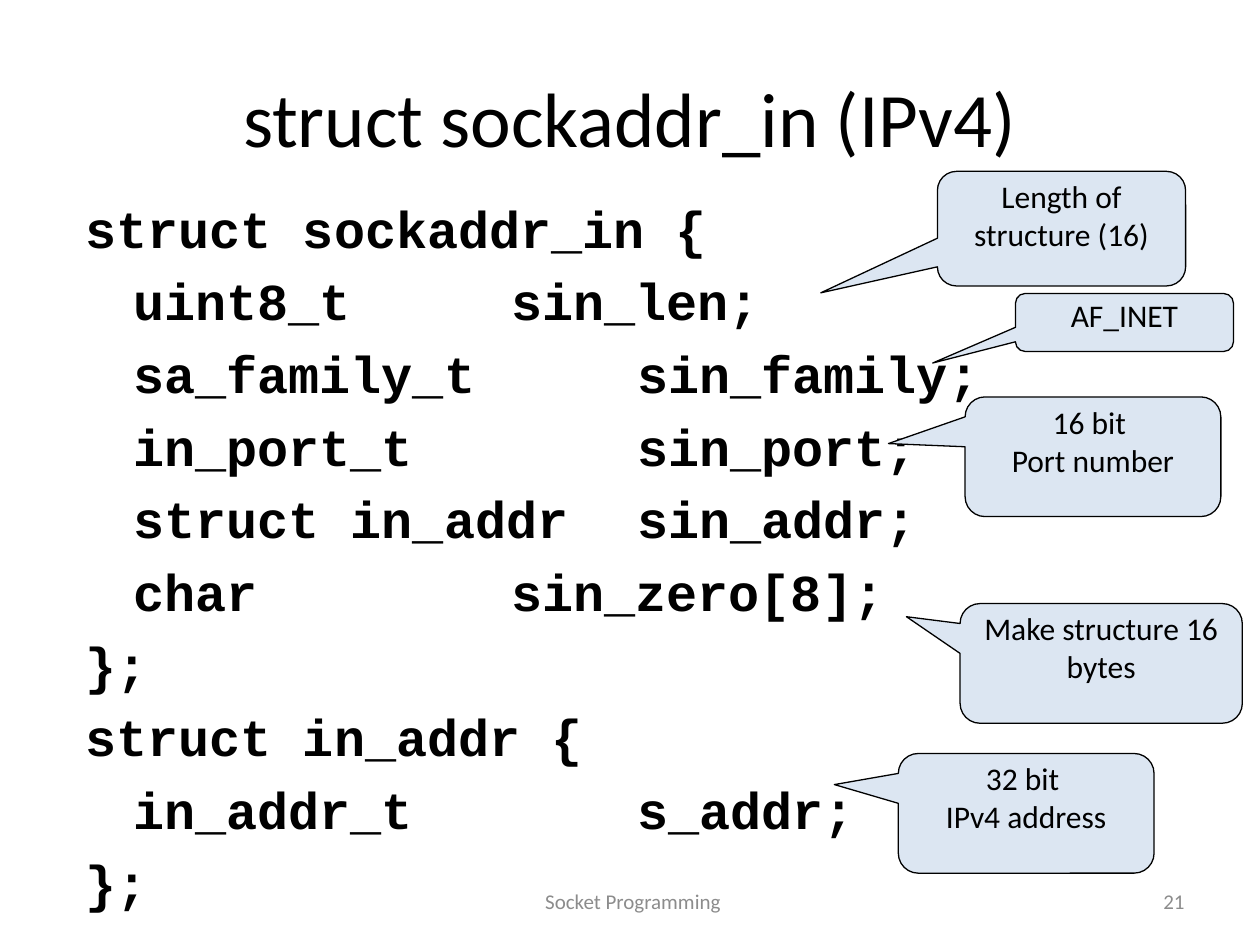
import lxml.etree
import pptx
import pptx.dml.color
import pptx.enum.shapes
import pptx.enum.text
import pptx.oxml.ns
import pptx.util

PX = 9144  # EMU per px, 100 px to the inch
ALIGN = pptx.enum.text.PP_ALIGN
ANCHOR = pptx.enum.text.MSO_ANCHOR

# Tab stops in px from the left edge of the code text
TYPE_STOP, NEAR_STOP, FAR_STOP = 38, 338, 438

# Line of code and the tab stop of its member name
CODE = [
    ("struct sockaddr_in {", None),
    ("\tuint8_t\tsin_len;", NEAR_STOP),
    ("\tsa_family_t\tsin_family;", FAR_STOP),
    ("\tin_port_t\tsin_port;", FAR_STOP),
    ("\tstruct in_addr\tsin_addr;", FAR_STOP),
    ("\tchar\tsin_zero[8];", NEAR_STOP),
    ("};", None),
    ("struct in_addr {", None),
    ("\tin_addr_t\ts_addr;", FAR_STOP),
    ("};", None),
]

# Box in px, pointer tip relative to the box centre, lines of text
CALLOUTS = [
    ((744, 136, 197, 91), (-0.97, 0.56), ["Length of structure (16)"]),
    ((806, 233, 173, 46), (-0.88, 0.7), ["AF_INET"]),
    ((766, 315, 203, 95), (-0.8, -0.11), ["16 bit ", "Port number"]),
    ((713, 598, 203, 95), (-0.75, -0.24), ["32 bit ", "IPv4 address"]),
    ((762, 479, 224, 95), (-0.69, -0.39), ["Make structure 16 bytes"]),
]


def px(*lengths):
    return [pptx.util.Emu(n * PX) for n in lengths]


def rgb(color):
    return pptx.dml.color.RGBColor.from_string(color)


def write(tf, lines, size, color="000000", align=ALIGN.CENTER, font="Calibri"):
    tf.word_wrap = True
    for i, line in enumerate(lines):
        p = tf.paragraphs[0] if i == 0 else tf.add_paragraph()
        p.text = line
        p.alignment = align
        p.font.name = font
        p.font.size = pptx.util.Pt(size)
        p.font.color.rgb = rgb(color)


def set_tabs(p, stops):
    # The tab list comes before the default run properties
    qn = pptx.oxml.ns.qn
    tabs = lxml.etree.Element(qn("a:tabLst"))
    for stop in stops:
        lxml.etree.SubElement(tabs, qn("a:tab"), pos=str(stop * PX), algn="l")
    p._p.get_or_add_pPr().find(qn("a:defRPr")).addprevious(tabs)


def add_title(s, box, text):
    title = s.shapes.title
    title.left, title.top, title.width, title.height = px(*box)
    title.text_frame.vertical_anchor = ANCHOR.MIDDLE
    write(title.text_frame, [text], 44)


def add_code(s, box, code):
    tf = s.shapes.add_textbox(*px(*box)).text_frame
    lines = [line for line, _ in code]
    write(tf, lines, 29.6, align=ALIGN.LEFT, font="Courier New")
    for p, (_, member_stop) in zip(tf.paragraphs, code):
        p.font.bold = True
        p.space_before = pptx.util.Pt(6)
        if member_stop:
            set_tabs(p, [TYPE_STOP, member_stop])


def add_callout(s, box, tip, lines):
    kind = pptx.enum.shapes.MSO_SHAPE.ROUNDED_RECTANGULAR_CALLOUT
    sp = s.shapes.add_shape(kind, *px(*box))
    sp.adjustments[0], sp.adjustments[1] = tip
    sp.shadow.inherit = False
    sp.fill.solid()
    sp.fill.fore_color.rgb = rgb("DCE6F2")
    sp.line.color.rgb = rgb("000000")
    sp.line.width = pptx.util.Pt(0.75)
    tf = sp.text_frame
    tf.margin_left = tf.margin_right = tf.margin_top = tf.margin_bottom = 0
    tf.vertical_anchor = ANCHOR.TOP
    write(tf, lines, 18)


def add_footer(s, box, text, align):
    tf = s.shapes.add_textbox(*px(*box)).text_frame
    tf.vertical_anchor = ANCHOR.MIDDLE
    write(tf, [text], 12, "8C8C8C", align)


def main():
    prs = pptx.Presentation()
    prs.slide_width, prs.slide_height = px(1000, 750)
    s = prs.slides.add_slide(prs.slide_layouts[5])

    # Title and struct listing
    add_title(s, (50, 30, 900, 125), "struct sockaddr_in (IPv4)")
    add_code(s, (58, 151, 850, 571), CODE)

    # Notes on the struct members
    for box, tip, lines in CALLOUTS:
        add_callout(s, box, tip, lines)

    # Footer and slide number
    add_footer(s, (342, 695, 317, 40), " Socket Programming", ALIGN.CENTER)
    add_footer(s, (717, 695, 233, 40), "21", ALIGN.RIGHT)

    prs.save("out.pptx")


if __name__ == "__main__":
    main()
